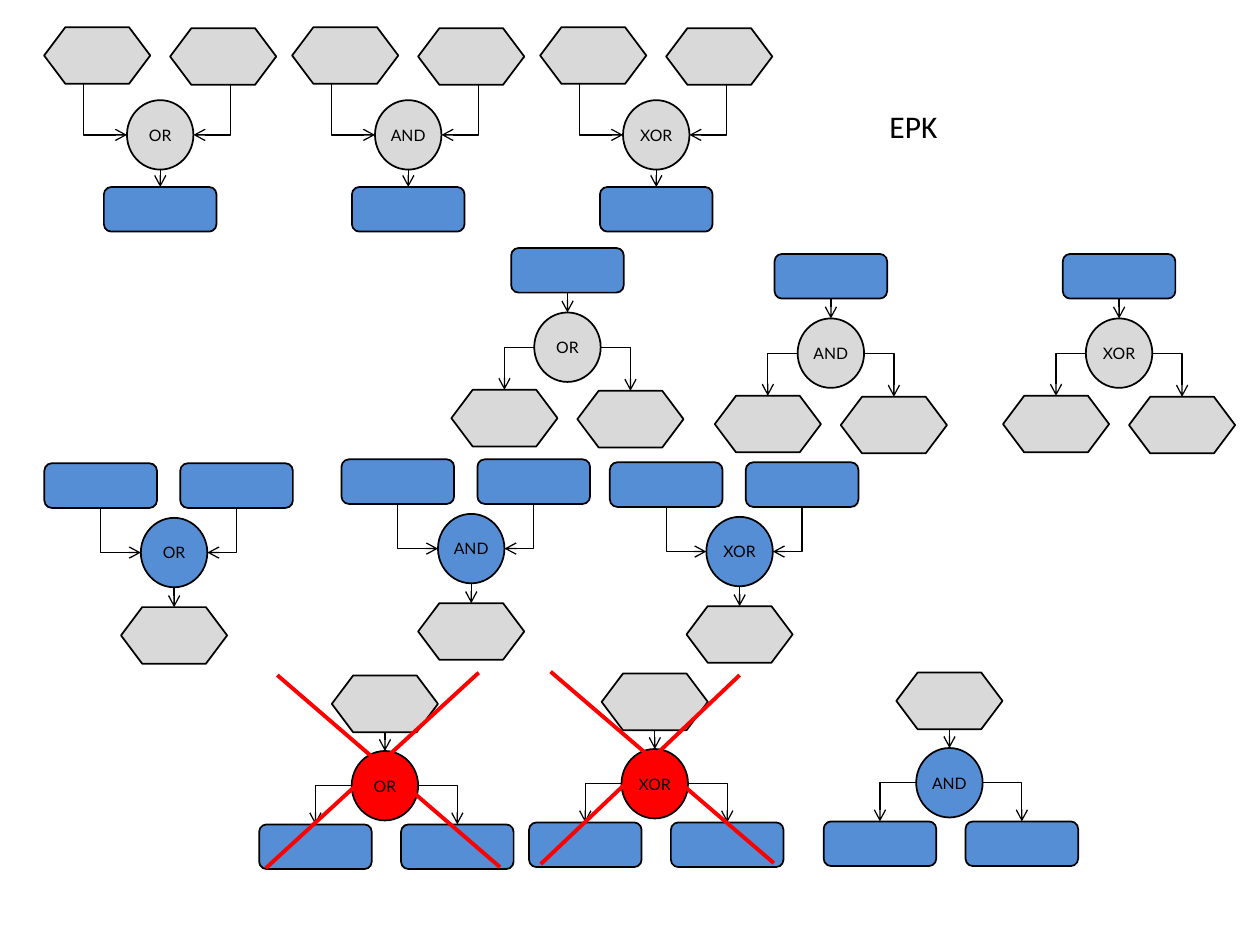
import pptx
import pptx.util
import pptx.dml.color
import pptx.enum.shapes
import pptx.enum.text
import pptx.oxml
import pptx.oxml.ns

Cm, Pt = pptx.util.Cm, pptx.util.Pt
KIND = pptx.enum.shapes.MSO_SHAPE
COLOURS = {"event": "D9D9D9", "function": "558ED5", "forbidden": "FF0000", "ink": "000000"}

# Content: lengths in cm, heights relative to the top of the operator circle
TITLE = "EPK"
SIZES = {"event": (2.14, 1.14), "function": (2.27, 0.9)}
PRESETS = {"event": KIND.FLOWCHART_PREPARATION, "function": KIND.FLOWCHART_ALTERNATE_PROCESS}
OPERATOR_W, OPERATOR_H = 1.34, 1.4

# pair: (centre offset, top, arrow offset) for the left and right node
EVENTS_JOIN = {"joins": True, "pair_kind": "event", "single_kind": "function", "single_top": 1.75,
               "pair": [(-1.27, -1.47, -1.55), (1.27, -1.45, 1.41)]}
EVENTS_SPLIT = {"joins": False, "pair_kind": "event", "single_kind": "function", "single_top": -1.3,
                "pair": [(-1.27, 1.56, -1.27), (1.27, 1.58, 1.27)]}
FUNCTIONS_JOIN = {"joins": True, "pair_kind": "function", "single_kind": "event", "single_top": 1.8,
                  "pair": [(-1.48, -1.1, -1.48), (1.26, -1.1, 1.26)]}
FUNCTIONS_SPLIT = {"joins": False, "pair_kind": "function", "single_kind": "event", "single_top": -1.52,
                   "pair": [(-1.4, 1.48, -1.4), (1.46, 1.48, 1.46)]}

# pattern, [(operator, colour, centre x, circle top)]
ROWS = [
    (EVENTS_JOIN, [("OR", "event", 3.23, 2.02), ("AND", "event", 8.23, 2.02),
                   ("XOR", "event", 13.23, 2.02)]),
    (EVENTS_SPLIT, [("OR", "event", 11.44, 6.3), ("AND", "event", 16.75, 6.42),
                    ("XOR", "event", 22.56, 6.42)]),
    (FUNCTIONS_JOIN, [("OR", "function", 3.51, 10.44), ("AND", "function", 9.5, 10.36),
                      ("XOR", "function", 14.91, 10.42)]),
    (FUNCTIONS_SPLIT, [("OR", "forbidden", 7.76, 15.14), ("XOR", "forbidden", 13.2, 15.1),
                       ("AND", "function", 19.14, 15.08)]),
]
CROSS_STROKES = [
    (9.65, 13.56, 5.36, 17.5), (10.08, 17.48, 5.59, 13.61),
    (14.91, 13.61, 10.9, 17.42), (15.6, 17.4, 11.1, 13.54),
]

deck = pptx.Presentation()
deck.slide_width, deck.slide_height = Cm(25.4), Cm(19.05)
slide = deck.slides.add_slide(deck.slide_layouts[6])


def rgb(name):
    return pptx.dml.color.RGBColor.from_string(COLOURS[name])


def add_run(paragraph, words, font, size):
    run = paragraph.add_run()
    run.text = words
    run.font.name, run.font.size = font, Pt(size)
    run.font.color.rgb = rgb("ink")


def add_node(preset, centre_x, top, size, colour):
    width, height = size
    node = slide.shapes.add_shape(preset, Cm(centre_x - width / 2), Cm(top), Cm(width), Cm(height))
    node.shadow.inherit = False
    node.fill.solid()
    node.fill.fore_color.rgb = rgb(colour)
    node.line.color.rgb = rgb("ink")
    node.line.width = Pt(1)
    return node


def add_line(x1, y1, x2, y2, colour="ink", weight=0.75, arrow=True):
    line = slide.shapes.add_connector(pptx.enum.shapes.MSO_CONNECTOR.STRAIGHT,
                                      Cm(x1), Cm(y1), Cm(x2), Cm(y2))
    line.line.color.rgb = rgb(colour)
    line.line.width = Pt(weight)
    if arrow:
        tail = pptx.oxml.parse_xml('<a:tailEnd %s type="arrow"/>' % pptx.oxml.ns.nsdecls("a"))
        line.line._get_or_add_ln().append(tail)
    effects = pptx.oxml.parse_xml("<a:effectLst %s/>" % pptx.oxml.ns.nsdecls("a"))
    line._element.spPr.append(effects)
    return line


def add_elbow(x1, y1, x2, y2, down_first):
    """One bend; a downward start needs the box turned by a quarter."""
    rotation = 0
    if down_first:
        mid_x, mid_y = (x1 + x2) / 2, (y1 + y2) / 2
        half_w, half_h = (y2 - y1) / 2, abs(x2 - x1) / 2
        rotation = 270 if x2 > x1 else 90
        if x2 > x1:
            half_w = -half_w
        x1, x2 = mid_x - half_w, mid_x + half_w
        y1, y2 = mid_y - half_h, mid_y + half_h
    shape_props = add_line(x1, y1, x2, y2)._element.spPr
    shape_props.find(pptx.oxml.ns.qn("a:prstGeom")).set("prst", "bentConnector2")
    if rotation:
        shape_props.find(pptx.oxml.ns.qn("a:xfrm")).set("rot", str(rotation * 60000))


def add_diagram(pattern, operator, colour, x, top):
    pair_kind, single_kind = pattern["pair_kind"], pattern["single_kind"]
    pair_size, single_size = SIZES[pair_kind], SIZES[single_kind]
    single_top = top + pattern["single_top"]
    middle = top + OPERATOR_H / 2

    # Branch arrows and outer nodes
    for offset, node_top, arrow_offset in pattern["pair"]:
        rim = x + (OPERATOR_W / 2 if offset > 0 else -OPERATOR_W / 2)
        node_y, arrow_x = top + node_top, x + arrow_offset
        if pattern["joins"]:
            add_elbow(arrow_x, node_y + pair_size[1], rim, middle, True)
        else:
            add_elbow(rim, middle, arrow_x, node_y, False)
        add_node(PRESETS[pair_kind], x + offset, node_y, pair_size, pair_kind)

    # Single node and its arrow
    add_node(PRESETS[single_kind], x, single_top, single_size, single_kind)
    if pattern["joins"]:
        add_line(x, top + OPERATOR_H, x, single_top)
    else:
        add_line(x, single_top + single_size[1], x, top)

    # Operator
    circle = add_node(KIND.FLOWCHART_CONNECTOR, x, top, (OPERATOR_W, OPERATOR_H), colour)
    frame = circle.text_frame
    frame.word_wrap = False
    frame.vertical_anchor = pptx.enum.text.MSO_ANCHOR.MIDDLE
    paragraph = frame.paragraphs[0]
    paragraph.alignment = pptx.enum.text.PP_ALIGN.CENTER
    paragraph.space_after = Pt(10)
    add_run(paragraph, operator, "Lato", 9)


for pattern, diagrams in ROWS:
    for diagram in diagrams:
        add_diagram(pattern, *diagram)

# Crosses over the forbidden splits
for stroke in CROSS_STROKES:
    add_line(*stroke, colour="forbidden", weight=2.25, arrow=False)

# Title
title = slide.shapes.add_textbox(Cm(17.68), Cm(2.03), Cm(1.5), Cm(1.02))
title.text_frame.word_wrap = False
title.text_frame.auto_size = pptx.enum.text.MSO_AUTO_SIZE.SHAPE_TO_FIT_TEXT
add_run(title.text_frame.paragraphs[0], TITLE, "Calibri", 18)

deck.save("out.pptx")
